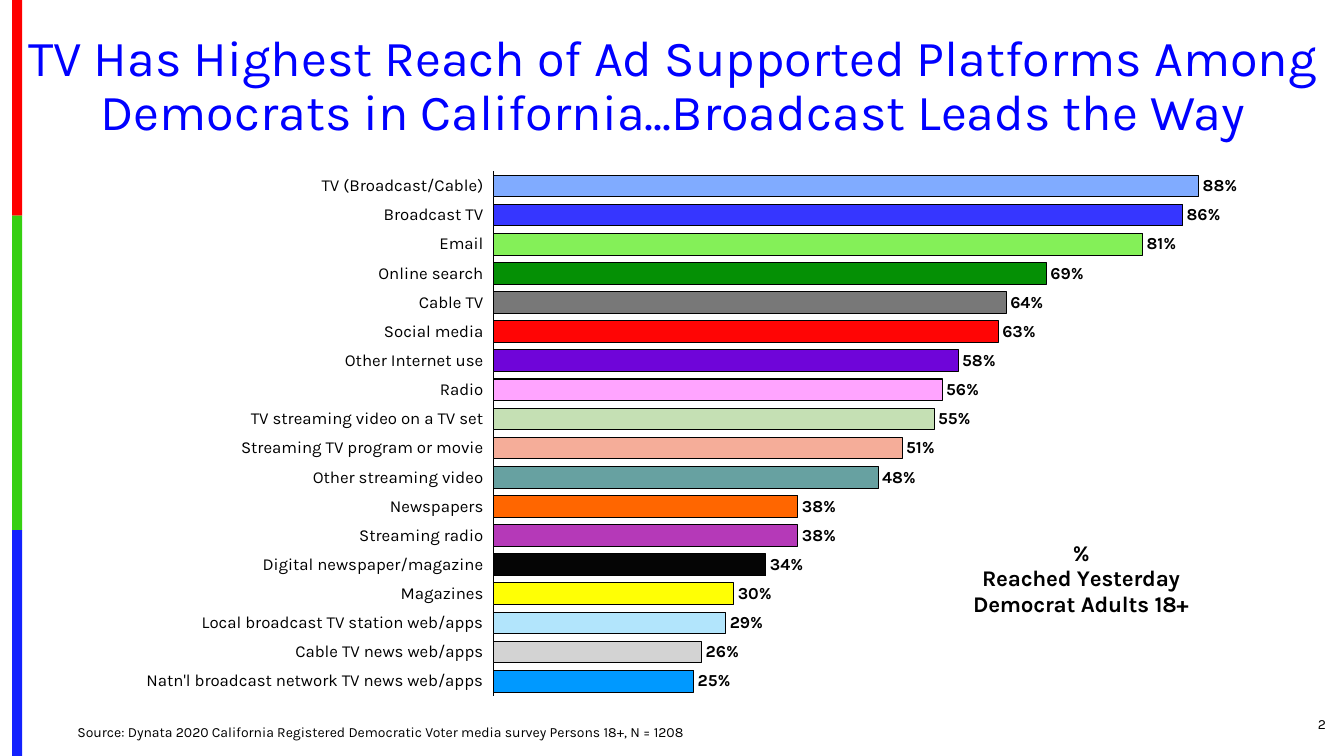
from dataclasses import dataclass

from lxml import etree
from pptx import Presentation
from pptx.chart.data import CategoryChartData
from pptx.dml.color import RGBColor
from pptx.enum.chart import XL_CHART_TYPE, XL_LABEL_POSITION, XL_TICK_LABEL_POSITION, XL_TICK_MARK
from pptx.enum.text import MSO_ANCHOR, PP_ALIGN
from pptx.oxml.ns import qn
from pptx.util import Inches, Pt

BAR_CLUSTERED = XL_CHART_TYPE.BAR_CLUSTERED
OUTSIDE_END = XL_LABEL_POSITION.OUTSIDE_END
LABELS_LOW = XL_TICK_LABEL_POSITION.LOW
NO_TICK = XL_TICK_MARK.NONE
MIDDLE, BOTTOM = MSO_ANCHOR.MIDDLE, MSO_ANCHOR.BOTTOM
LEFT, CENTER, RIGHT = PP_ALIGN.LEFT, PP_ALIGN.CENTER, PP_ALIGN.RIGHT


@dataclass(frozen=True)
class Theme:
    """Colours and type sizes of the slide."""
    font: str = "Karla"
    ink: str = "000000"
    headline: str = "0000FF"
    stripes: tuple = ("FE0000", "36CF12", "1322FE")
    headline_size: int = 36
    chart_title_size: int = 16
    label_size: int = 12
    small_size: int = 10


THEME = Theme()

PLATFORMS = [
    ("TV (Broadcast/Cable)", 0.88, "80ABFF"),
    ("Broadcast TV", 0.86, "3636FF"),
    ("Email", 0.81, "84F058"),
    ("Online search", 0.69, "059005"),
    ("Cable TV", 0.64, "787878"),
    ("Social media", 0.63, "FF0505"),
    ("Other Internet use", 0.58, "6F05D9"),
    ("Radio", 0.56, "FFA4FF"),
    ("TV streaming video on a TV set", 0.55, "C5E0B4"),
    ("Streaming TV program or movie", 0.51, "F5AD99"),
    ("Other streaming video", 0.48, "67A1A1"),
    ("Newspapers", 0.38, "FF6600"),
    ("Streaming radio", 0.38, "B539B8"),
    ("Digital newspaper/magazine", 0.34, "050505"),
    ("Magazines", 0.3, "FFFF05"),
    ("Local broadcast TV station web/apps", 0.29, "B2E5FC"),
    ("Cable TV news web/apps", 0.26, "D3D3D3"),
    ("Natn'l broadcast network TV news web/apps", 0.25, "0099FF"),
]


def style_font(font, size, color=THEME.ink, bold=False):
    """Apply the theme typeface with a size, colour and weight."""
    font.name = THEME.font
    font.size = Pt(size)
    font.bold = bold
    font.color.rgb = RGBColor.from_string(color)


def add_text(slide, box, text, size, color=THEME.ink, align=LEFT, anchor=MIDDLE, spacing=1.0):
    """Place one wrapped paragraph in a box given in inches."""
    frame = slide.shapes.add_textbox(*map(Inches, box)).text_frame
    frame.word_wrap = True
    frame.vertical_anchor = anchor
    paragraph = frame.paragraphs[0]
    paragraph.text = text
    paragraph.alignment = align
    paragraph.line_spacing = spacing
    style_font(paragraph.font, size, color)


def add_side_stripe(slide, box, heights):
    """Stack the coloured segments down the box from its top."""
    left, top, width, _ = box
    for color, height in zip(THEME.stripes, heights):
        segment = slide.shapes.add_shape(1, *map(Inches, (left, top, width, height)))
        segment.shadow.inherit = False
        segment.fill.solid()
        segment.fill.fore_color.rgb = RGBColor.from_string(color)
        segment.line.fill.background()
        top += height


def set_layout(parent, index, **settings):
    """Give a chart part a manual layout as fractions of the chart."""
    for old in parent.findall(qn("c:layout")):
        parent.remove(old)
    layout = etree.Element(qn("c:layout"))
    manual = etree.SubElement(layout, qn("c:manualLayout"))
    for name, value in settings.items():
        etree.SubElement(manual, qn(f"c:{name}")).set("val", str(value))
    parent.insert(index, layout)


def add_chart_title(chart, lines):
    """Write the chart title in the free area at the lower right."""
    chart.has_title = True
    title = chart.chart_title
    title.include_in_layout = False
    frame = title.text_frame
    frame.text = "\n".join(lines)
    for paragraph in frame.paragraphs:
        paragraph.alignment = CENTER
        style_font(paragraph.font, THEME.chart_title_size, bold=True)
    set_layout(title._element, 1, xMode="edge", yMode="edge", x=0.73, y=0.71)


def add_reach_chart(slide, box):
    """Draw the ranked reach bars with one colour per platform."""
    data = CategoryChartData(number_format="0%")
    names, reach, colors = zip(*PLATFORMS)
    data.categories = names
    data.add_series("Series 1", reach)
    chart = slide.shapes.add_chart(BAR_CLUSTERED, *map(Inches, box), data).chart
    chart.has_legend = False
    style_font(chart.font, THEME.small_size)
    add_chart_title(chart, ["%", "Reached Yesterday", "Democrat Adults 18+"])

    platform_axis = chart.category_axis
    platform_axis.reverse_order = True
    platform_axis.major_tick_mark = platform_axis.minor_tick_mark = NO_TICK
    platform_axis.tick_label_position = LABELS_LOW
    platform_axis.has_major_gridlines = False
    style_font(platform_axis.tick_labels.font, THEME.label_size)
    platform_axis.format.line.color.rgb = RGBColor.from_string(THEME.ink)
    platform_axis.format.line.width = Pt(1)

    reach_axis = chart.value_axis
    reach_axis.minimum_scale, reach_axis.maximum_scale = 0, 1
    reach_axis.has_major_gridlines = False
    reach_axis.visible = False

    plot = chart.plots[0]
    plot.gap_width = 34
    plot.vary_by_categories = False
    plot.has_data_labels = True
    labels = plot.data_labels
    labels.show_value = True
    labels.number_format = "0%"
    labels.number_format_is_linked = False
    labels.position = OUTSIDE_END
    style_font(labels.font, THEME.label_size, bold=True)
    for index, color in enumerate(colors):
        bar = plot.series[0].points[index].format
        bar.fill.solid()
        bar.fill.fore_color.rgb = RGBColor.from_string(color)
        bar.line.color.rgb = RGBColor.from_string(THEME.ink)
        bar.line.width = Pt(0.75)

    plot_area = chart.element.find(f"{qn('c:chart')}/{qn('c:plotArea')}")
    set_layout(plot_area, 0, layoutTarget="inner", xMode="edge", yMode="edge",
               x=0.344, y=0.051, w=0.649, h=0.946)


def build_reach_slide(prs):
    """Compose the reach slide on the blank layout."""
    slide = prs.slides.add_slide(prs.slide_layouts[6])
    add_side_stripe(slide, (0.12, 0, 0.1, 7.5), (2.14, 3.12, 2.24))
    add_text(slide, (0, 0.27, 13.35, 1.19),
             "TV Has Highest Reach of Ad Supported Platforms Among "
             "Democrats in California...Broadcast Leads the Way",
             THEME.headline_size, THEME.headline, CENTER, spacing=0.9)
    add_text(slide, (12.17, 6.98, 1.08, 0.4), "2", THEME.small_size, align=RIGHT)
    add_reach_chart(slide, (0.68, 1.42, 12.25, 5.5))
    add_text(slide, (0.67, 7.15, 10, 0.25),
             "Source: Dynata 2020 California Registered Democratic Voter media survey "
             "Persons 18+, N = 1208",
             THEME.small_size, anchor=BOTTOM, spacing=0.9)


def main():
    """Build and save the presentation."""
    prs = Presentation()
    prs.slide_width, prs.slide_height = Inches(13.33), Inches(7.5)
    build_reach_slide(prs)
    prs.save("out.pptx")


if __name__ == "__main__":
    main()
